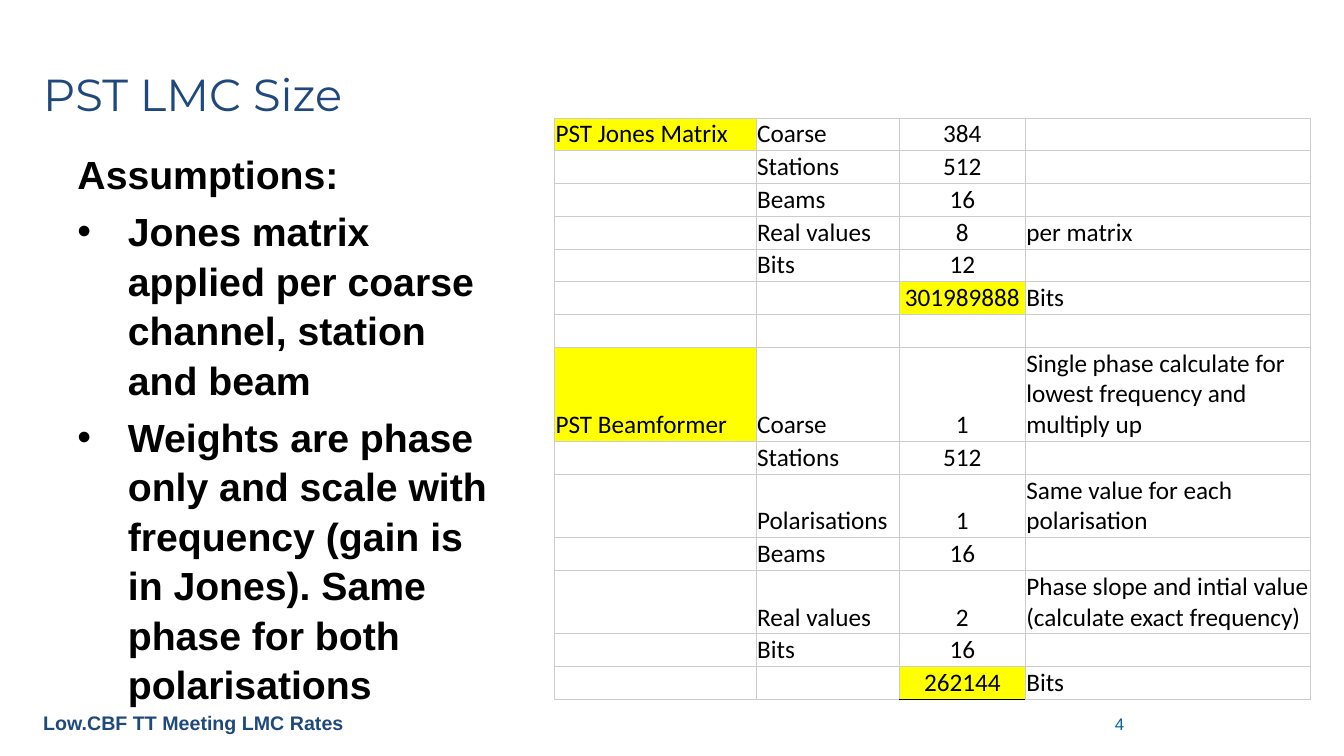
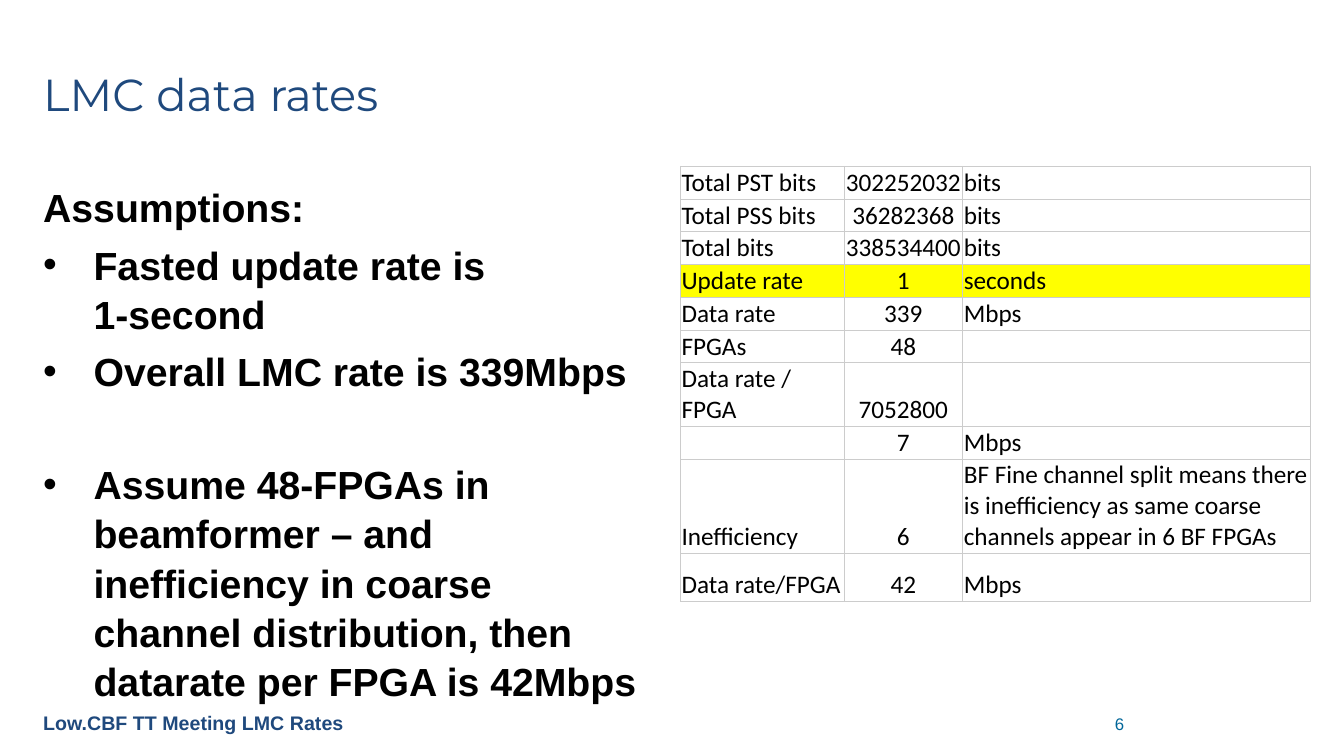
from dataclasses import dataclass

from lxml.etree import SubElement
from pptx import Presentation
from pptx.dml.color import RGBColor
from pptx.enum.text import MSO_ANCHOR, PP_ALIGN
from pptx.oxml.ns import qn
from pptx.util import Inches, Pt


@dataclass(frozen=True)
class Theme:
    navy: str = "1F497D"
    teal: str = "006699"
    black: str = "000000"
    white: str = "FFFFFF"
    highlight: str = "FFFF00"
    grid: str = "CCCCCC"
    heading_font: str = "Montserrat"
    text_font: str = "Arial"
    table_font: str = "Calibri"
    title_size: float = 32
    body_size: float = 28
    table_size: float = 18
    footer_size: float = 14
    number_size: float = 12
    body_spacing: float = 1.05
    body_gap: float = 5.6
    grid_width: float = 0.6


FOOTER = "Low.CBF TT Meeting LMC Rates"
LINE_HEIGHT = 0.305
CELL_INSET = 0.01

PST_ROWS = [
    ("PST Jones Matrix", "Coarse", "384", ""),
    ("", "Stations", "512", ""),
    ("", "Beams", "16", ""),
    ("", "Real values", "8", "per matrix"),
    ("", "Bits", "12", ""),
    ("", "", "301989888", "Bits"),
    ("", "", "", ""),
    ("PST Beamformer", "Coarse", "1",
     "Single phase calculate for lowest frequency and multiply up"),
    ("", "Stations", "512", ""),
    ("", "Polarisations", "1", "Same value for each polarisation"),
    ("", "Beams", "16", ""),
    ("", "Real values", "2",
     "Phase slope and intial value (calculate exact frequency)"),
    ("", "Bits", "16", ""),
    ("", "", "262144", "Bits"),
]

RATE_ROWS = [
    ("Total PST bits", "302252032", "bits"),
    ("Total PSS bits", "36282368", "bits"),
    ("Total bits", "338534400", "bits"),
    ("Update rate", "1", "seconds"),
    ("Data rate", "339", "Mbps"),
    ("FPGAs", "48", ""),
    ("Data rate / FPGA", "7052800", ""),
    ("", "7", "Mbps"),
    ("Inefficiency", "6",
     "BF Fine channel split means there is inefficiency as same coarse "
     "channels appear in 6 BF FPGAs"),
    ("Data rate/FPGA", "42", "Mbps"),
]


def write(paragraph, text, *, font, size, color, bold=False, align=PP_ALIGN.LEFT):
    paragraph.text = text
    paragraph.alignment = align
    for run in paragraph.runs:
        run.font.name = font
        run.font.size = Pt(size)
        run.font.bold = bold
        run.font.color.rgb = RGBColor.from_string(color)


def add_bullet(paragraph, indent):
    properties = paragraph._p.get_or_add_pPr()
    properties.set("marL", str(indent))
    properties.set("indent", str(-indent))
    SubElement(properties, qn("a:buFont"), typeface="Arial")
    SubElement(properties, qn("a:buChar"), char="•")


def draw_borders(cell, width, color, bottom_color):
    properties = cell._tc.get_or_add_tcPr()
    for side in "LRTB":
        line = SubElement(properties, qn(f"a:ln{side}"), w=str(Pt(width)))
        fill = SubElement(line, qn("a:solidFill"))
        SubElement(fill, qn("a:srgbClr"), val=bottom_color if side == "B" else color)


class Deck:
    def __init__(self, theme):
        self.theme = theme
        self.presentation = Presentation()
        self.presentation.slide_width = Inches(13.33)
        self.presentation.slide_height = Inches(7.5)
        self.slide = None

    def add_slide(self, title, number):
        theme = self.theme
        self.slide = self.presentation.slides.add_slide(
            self.presentation.slide_layouts[6])
        footer = self.add_frame(0.33, 7, 6.33, 0.34)
        write(footer.paragraphs[0], FOOTER, font=theme.text_font,
              size=theme.footer_size, color=theme.navy, bold=True)
        page = self.add_frame(10.44, 7.03, 1.33, 0.3)
        write(page.paragraphs[0], str(number), font=theme.text_font,
              size=theme.number_size, color=theme.teal, align=PP_ALIGN.CENTER)
        heading = self.add_frame(0.33, 0.3, 12.67, 1.25)
        heading.vertical_anchor = MSO_ANCHOR.MIDDLE
        write(heading.paragraphs[0], title, font=theme.heading_font,
              size=theme.title_size, color=theme.navy)

    def add_frame(self, left, top, width, height):
        """Add a wrapping text box and return its text frame."""
        box = self.slide.shapes.add_textbox(
            Inches(left), Inches(top), Inches(width), Inches(height))
        box.text_frame.word_wrap = True
        return box.text_frame

    def add_assumptions(self, left, top, width, height, bullets, separate_last=False):
        """List the bullets; separate_last leaves a line free above the last one."""
        theme = self.theme
        style = dict(font=theme.text_font, size=theme.body_size,
                     color=theme.black, bold=True)
        frame = self.add_frame(left, top, width, height)
        write(frame.paragraphs[0], "Assumptions:", **style)
        frame.paragraphs[0].line_spacing = theme.body_spacing
        for bullet in bullets:
            paragraph = frame.add_paragraph()
            add_bullet(paragraph, Inches(0.5))
            write(paragraph, bullet, **style)
            paragraph.line_spacing = theme.body_spacing
            paragraph.space_before = Pt(theme.body_gap)
        if separate_last:
            paragraph.space_before = Pt(45)

    def add_table(self, left, top, widths, rows, *, number_column, highlights,
                  row_lines, underlined=None):
        """Fill a grid; row_lines gives the text lines of rows taller than one."""
        theme = self.theme
        heights = [row_lines.get(index, 1) * LINE_HEIGHT + 2 * CELL_INSET
                   for index in range(len(rows))]
        table = self.slide.shapes.add_table(
            len(rows), len(widths), Inches(left), Inches(top),
            Inches(sum(widths)), Inches(sum(heights))).table
        table.first_row = table.horz_banding = False
        for column, width in zip(table.columns, widths):
            column.width = Inches(width)
        for row, height in zip(table.rows, heights):
            row.height = Inches(height)
        for row_index, values in enumerate(rows):
            for column_index, value in enumerate(values):
                position = (row_index, column_index)
                cell = table.cell(*position)
                cell.margin_left = cell.margin_right = Inches(CELL_INSET)
                cell.margin_top = cell.margin_bottom = Inches(CELL_INSET)
                cell.vertical_anchor = MSO_ANCHOR.BOTTOM
                draw_borders(cell, theme.grid_width, theme.grid,
                             theme.black if position == underlined else theme.grid)
                cell.fill.solid()
                cell.fill.fore_color.rgb = RGBColor.from_string(
                    theme.highlight if position in highlights else theme.white)
                centred = column_index == number_column
                write(cell.text_frame.paragraphs[0], value, font=theme.table_font,
                      size=theme.table_size, color=theme.black,
                      align=PP_ALIGN.CENTER if centred else PP_ALIGN.LEFT)

    def save(self):
        self.presentation.save("out.pptx")


def main():
    deck = Deck(Theme())

    deck.add_slide("PST LMC Size", 4)
    deck.add_assumptions(0.67, 1.42, 4.42, 5.42, [
        "Jones matrix applied per coarse channel, station and beam",
        "Weights are phase only and scale with frequency (gain is in Jones). "
        "Same phase for both polarisations",
    ])
    deck.add_table(5.5, 1.17, [2, 1.42, 1.25, 2.83], PST_ROWS, number_column=2,
                   highlights={(0, 0), (5, 2), (7, 0), (13, 2)},
                   row_lines={7: 3, 9: 2, 11: 2}, underlined=(13, 2))

    deck.add_slide("LMC data rates", 6)
    deck.add_assumptions(0.33, 1.75, 6.08, 5.17, [
        "Fasted update rate is\v1-second",
        "Overall LMC rate is 339Mbps",
        "Assume 48-FPGAs in beamformer – and inefficiency in coarse channel "
        "distribution, then datarate per FPGA is 42Mbps",
    ], separate_last=True)
    deck.add_table(6.75, 1.65, [1.62, 1.18, 3.45], RATE_ROWS, number_column=1,
                   highlights={(3, 0), (3, 1), (3, 2)},
                   row_lines={6: 2, 8: 3, 9: 1.5})

    deck.save()


if __name__ == "__main__":
    main()
